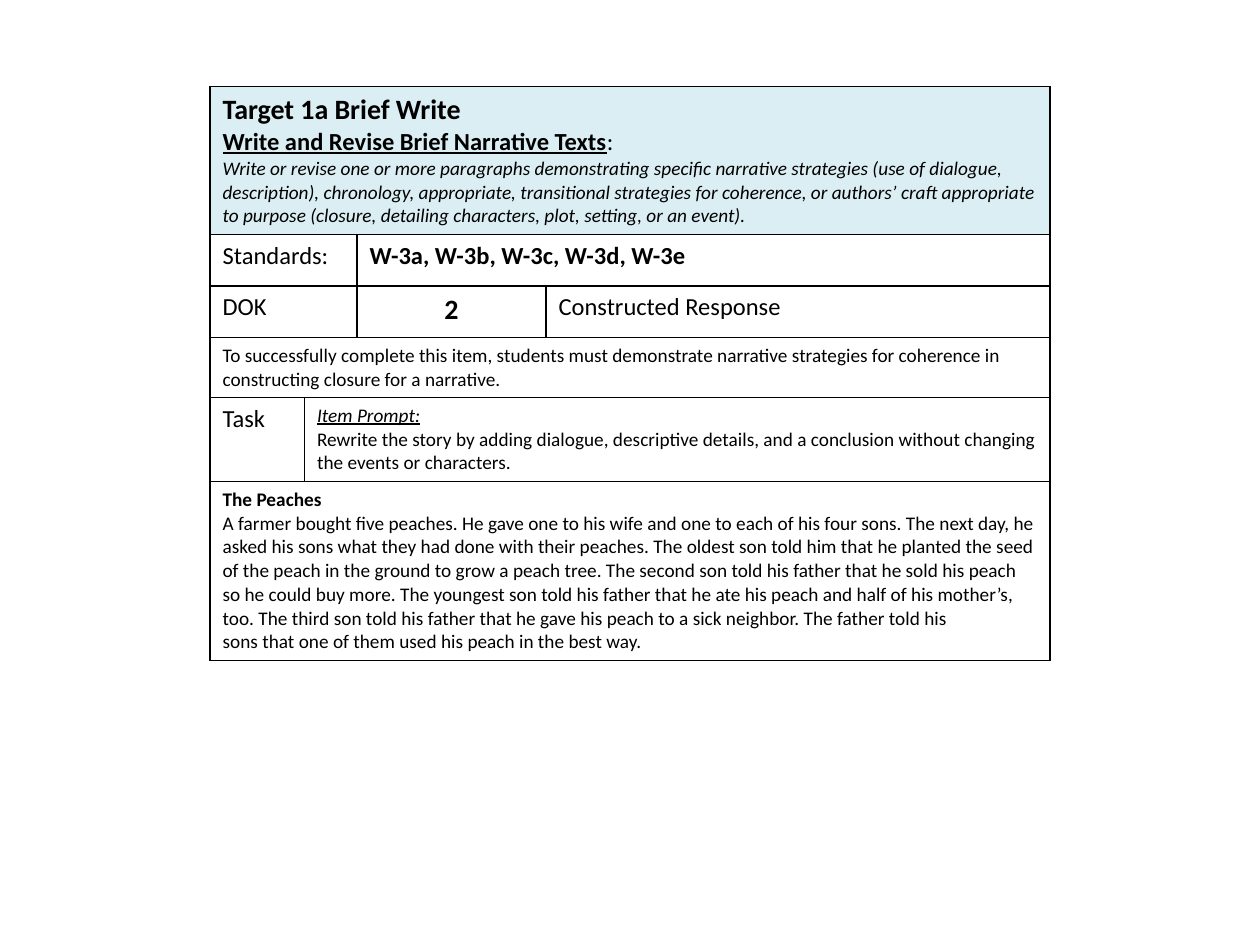
import pptx
import pptx.dml.color
import pptx.enum.text
import pptx.oxml
import pptx.oxml.ns
import pptx.util

COLORS = {"text": "000000", "border": "000000", "header": "DBEEF4"}
GRID_COLS, GRID_ROWS = 120, 90
COLUMNS = [9, 5, 18, 48]
ROW_HEIGHT = 4.9


def run(text, size=11, **style):
    return text, size, style


# Each row lists (column span, paragraphs of runs)
ROWS = [
    [(4, [
        [run("Target 1a Brief Write", 16, bold=True)],
        [run("Write and Revise Brief Narrative Texts", 14, bold=True, underline=True),
         run(":", 14)],
        [run("Write or revise one or more paragraphs demonstrating specific narrative "
             "strategies (use of dialogue, description), chronology, appropriate, "
             "transitional strategies for coherence, or authors’ craft appropriate to "
             "purpose (closure, detailing characters, plot, setting, or an event).",
             italic=True)],
    ])],
    [(2, [[run("Standards:", 14)]]),
     (2, [[run("W-3a, W-3b, W-3c, W-3d, W-3e", 14, bold=True)]])],
    [(2, [[run("DOK", 14)]]),
     (1, [[run("2", 16, bold=True)]]),
     (1, [[run("Constructed Response", 14)]])],
    [(4, [[run("To successfully complete this item, students must demonstrate narrative "
               "strategies for coherence in constructing closure for a narrative.")]])],
    [(1, [[run("Task", 14)]]),
     (3, [
         [run("Item Prompt:", italic=True, underline=True)],
         [run("Rewrite the story by adding dialogue, descriptive details, and a conclusion "
              "without changing the events or characters.")],
     ])],
    [(4, [
        [run("The Peaches", bold=True)],
        [run("A farmer bought five peaches. He gave one to his wife and one to each of his "
             "four sons. The next day, he asked his sons what they had done with their "
             "peaches. The oldest son told him that he planted the seed of the peach in the "
             "ground to grow a peach tree. The second son told his father that he sold his "
             "peach so he could buy more. The youngest son told his father that he ate his "
             "peach and half of his mother’s, too. The third son told his father that he "
             "gave his peach to a sick neighbor. The father told his")],
        [run("sons that one of them used his peach in the best way.")],
    ])],
]


class Sheet:
    """Holds the style, the grid and the current slide."""

    font = "Calibri"
    border_width = 1

    def __init__(self, prs):
        self.col = prs.slide_width / GRID_COLS
        self.row = prs.slide_height / GRID_ROWS
        self.slide = prs.slides.add_slide(prs.slide_layouts[6])

    def x(self, cols):
        return pptx.util.Emu(round(cols * self.col))

    def y(self, rows):
        return pptx.util.Emu(round(rows * self.row))

    def table(self, left, top, height, columns, rows):
        sp = self.slide.shapes.add_table(
            len(rows), len(columns), self.x(left), self.y(top),
            self.x(sum(columns)), self.y(height))
        table = sp.table
        table.first_row = table.horz_banding = False
        for column, width in zip(table.columns, columns):
            column.width = self.x(width)
        for i, cells in enumerate(rows):
            table.rows[i].height = self.y(ROW_HEIGHT)
            for j in range(len(columns)):
                self.frame(table.cell(i, j))
            start = 0
            for span, paragraphs in cells:
                cell = table.cell(i, start)
                if span > 1:
                    cell.merge(table.cell(i, start + span - 1))
                self.text(cell.text_frame, paragraphs)
                start += span
        sp.height = self.y(height)
        return table

    def frame(self, cell):
        """Draw the four borders and clear the style's fill."""
        props = cell._tc.get_or_add_tcPr()
        for side in ("lnL", "lnR", "lnT", "lnB"):
            props.append(pptx.oxml.parse_xml(
                f'<a:{side} {pptx.oxml.ns.nsdecls("a")} '
                f'w="{pptx.util.Pt(self.border_width)}"><a:solidFill>'
                f'<a:srgbClr val="{COLORS["border"]}"/></a:solidFill></a:{side}>'))
        cell.fill.background()

    def text(self, tf, paragraphs):
        for k, runs in enumerate(paragraphs):
            p = tf.add_paragraph() if k else tf.paragraphs[0]
            for text, size, style in runs:
                r = p.add_run()
                r.text = text
                r.font.name = self.font
                r.font.size = pptx.util.Pt(size)
                r.font.color.rgb = pptx.dml.color.RGBColor.from_string(COLORS["text"])
                for name in ("bold", "italic", "underline"):
                    setattr(r.font, name, style.get(name, False))

    def fill(self, cell, color):
        cell.fill.solid()
        cell.fill.fore_color.rgb = pptx.dml.color.RGBColor.from_string(COLORS[color])


def main():
    prs = pptx.Presentation()
    prs.slide_width = pptx.util.Inches(10)
    prs.slide_height = pptx.util.Inches(7.5)
    s = Sheet(prs)

    # Task card
    card = s.table(20, 8.25, 53.5, COLUMNS, ROWS)

    # Shaded heading and centred DOK level
    s.fill(card.cell(0, 0), "header")
    level = card.cell(2, 2).text_frame.paragraphs[0]
    level.alignment = pptx.enum.text.PP_ALIGN.CENTER

    prs.save("out.pptx")


if __name__ == "__main__":
    main()
